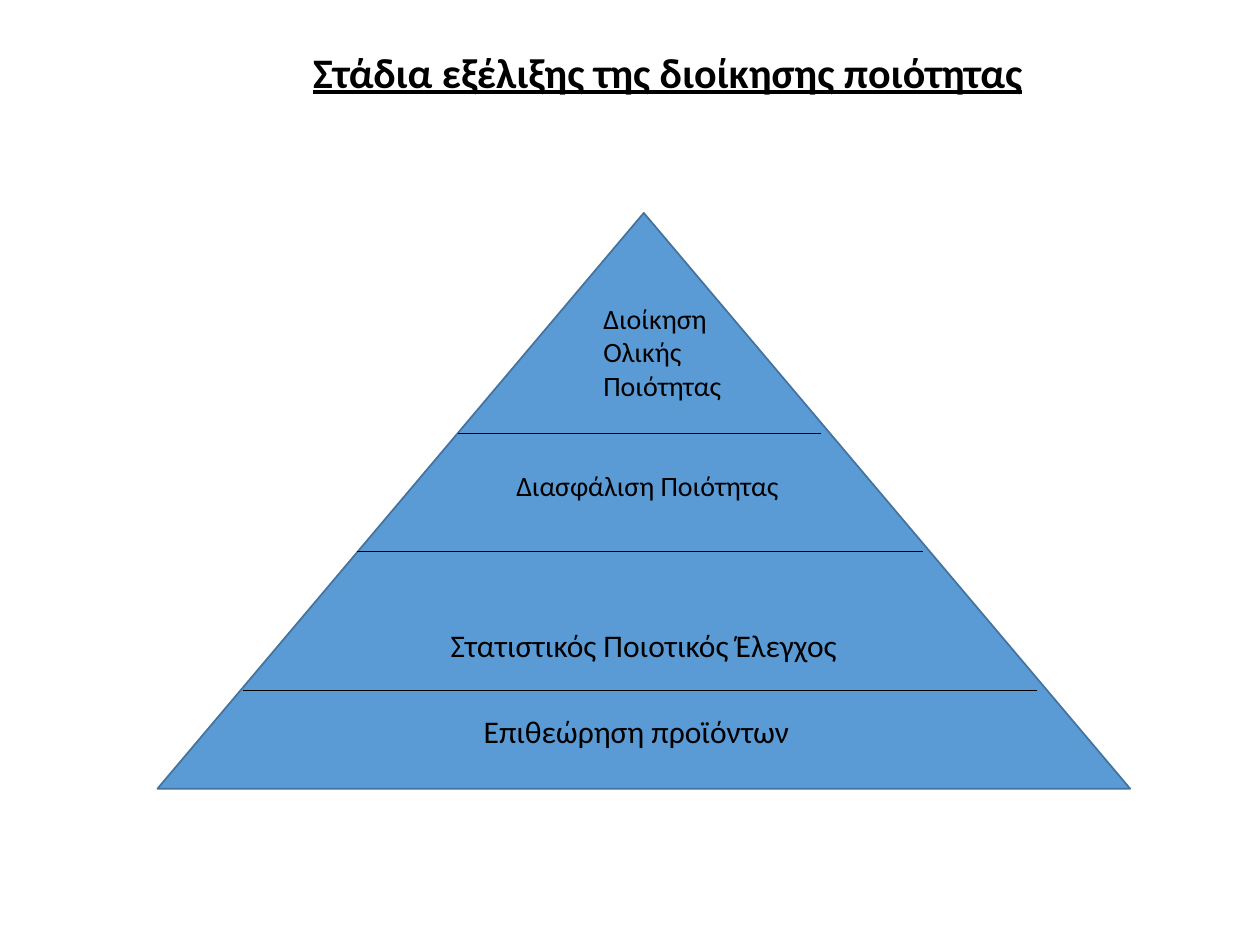
from lxml import etree
from pptx import Presentation
from pptx.dml.color import RGBColor
from pptx.enum.shapes import MSO_CONNECTOR, MSO_SHAPE
from pptx.enum.text import MSO_ANCHOR, PP_ALIGN
from pptx.oxml.ns import qn
from pptx.util import Pt

LEFT, CENTER = PP_ALIGN.LEFT, PP_ALIGN.CENTER
TOP, MIDDLE = MSO_ANCHOR.TOP, MSO_ANCHOR.MIDDLE
TRIANGLE = MSO_SHAPE.ISOSCELES_TRIANGLE
STRAIGHT = MSO_CONNECTOR.STRAIGHT
FONT = "Calibri"
BLACK, BLUE, EDGE = "000000", "5B9BD5", "43739E"
AXIS = 365.7
LEVELS = [(394.6, 226.8), (315.4, 161.6), (247.7, 103.7)]


def color(code):
    """Turn a hex string into a colour."""
    return RGBColor.from_string(code)


def write(shape, text, size=16, align=LEFT, anchor=TOP, bold=False,
          line=False, inset=7.2, right=7.2, space=1.0):
    """Put formatted text into a shape."""
    frame = shape.text_frame
    frame.word_wrap = True
    frame.vertical_anchor = anchor
    frame.margin_left, frame.margin_right = Pt(inset), Pt(right)
    para = frame.paragraphs[0]
    para.alignment, para.line_spacing = align, space
    run = para.add_run()
    run.text = text
    font = run.font
    font.name, font.size = FONT, Pt(size)
    font.bold, font.underline = bold, line
    font.color.rgb = color(BLACK)


def label(slide, box, text, **style):
    """Add a text box with its wording."""
    write(slide.shapes.add_textbox(*map(Pt, box)), text, **style)


def pyramid(slide, box, text):
    """Add the triangle that holds all stages."""
    shape = slide.shapes.add_shape(TRIANGLE, *map(Pt, box))
    shape.shadow.inherit = False
    shape.fill.solid()
    shape.fill.fore_color.rgb = color(BLUE)
    shape.line.color.rgb = color(EDGE)
    shape.line.width = Pt(1)
    write(shape, text, size=18, align=CENTER, anchor=MIDDLE)


def divider(slide, y, half):
    """Draw a level line centred on the pyramid axis."""
    ends = (AXIS - half, y, AXIS + half, y)
    rule = slide.shapes.add_connector(STRAIGHT, *map(Pt, ends))
    rule.line.color.rgb = color(BLACK)
    rule.line.width = Pt(0.5)
    etree.SubElement(rule._element.spPr, qn("a:effectLst"))


def main():
    """Build and save the slide."""
    deck = Presentation()
    deck.slide_width, deck.slide_height = Pt(720), Pt(540)
    slide = deck.slides.add_slide(deck.slide_layouts[6])
    label(slide, (49.7, 9.4, 620.6, 66.2),
          "Στάδια εξέλιξης της διοίκησης ποιότητας", size=24, bold=True,
          line=True, anchor=MIDDLE, inset=129.2, space=0.9)
    pyramid(slide, (90, 121.7, 555.8, 329), "Στατιστικός Ποιοτικός Έλεγχος")
    for y, half in LEVELS:
        divider(slide, y, half)
    label(slide, (188, 403.2, 351.4, 28.8), "Επιθεώρηση προϊόντων",
          size=18, align=CENTER)
    label(slide, (280.8, 264.2, 174.2, 26.6), "Διασφάλιση Ποιότητας",
          inset=14.2, right=0)
    label(slide, (337.7, 168.5, 96.5, 65.5), "Διοίκηση Ολικής Ποιότητας")
    deck.save("out.pptx")


if __name__ == "__main__":
    main()
